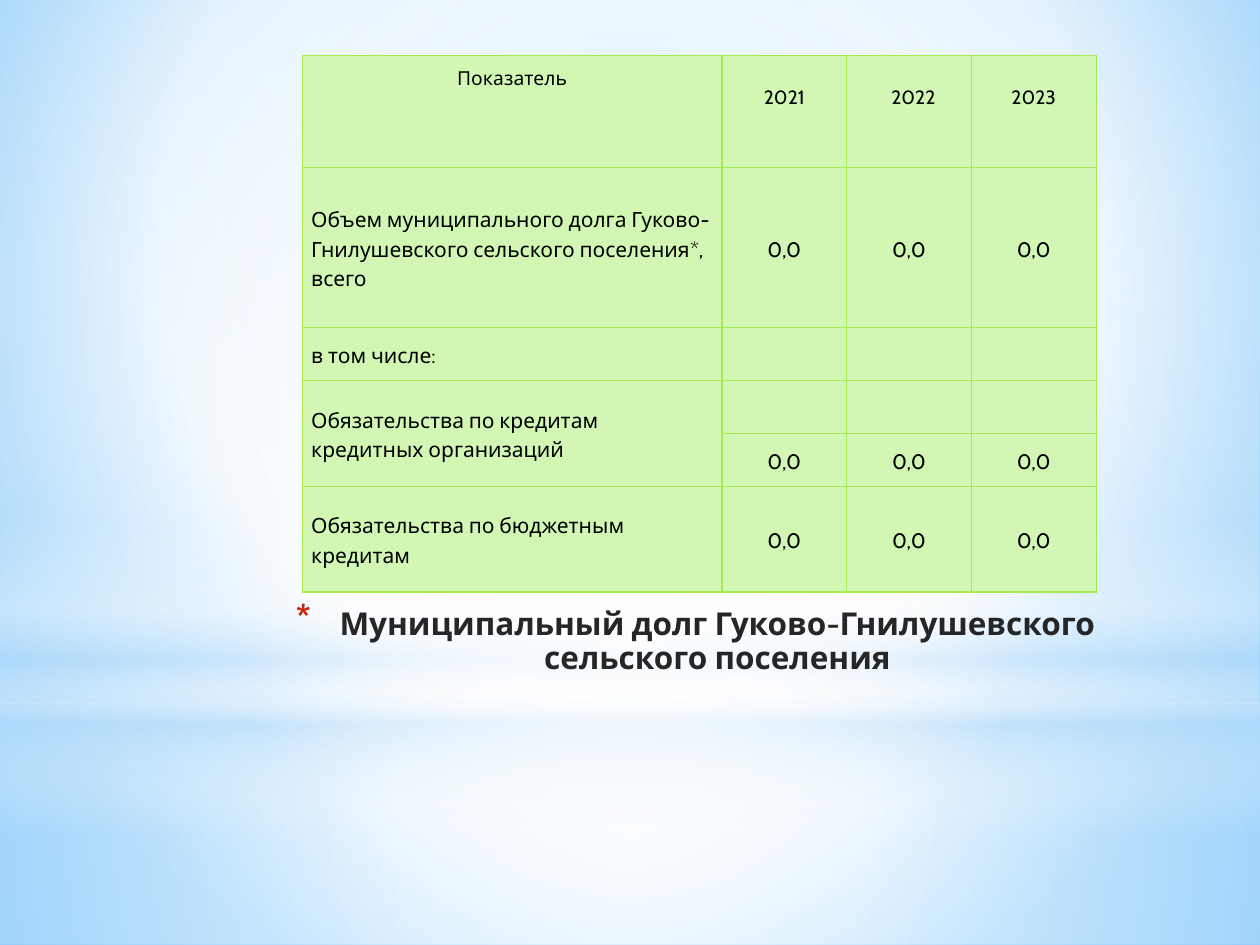
from dataclasses import dataclass
from lxml.etree import SubElement
from pptx import Presentation
from pptx.dml.color import RGBColor
from pptx.enum.shapes import MSO_SHAPE
from pptx.enum.text import MSO_ANCHOR, PP_ALIGN
from pptx.oxml.ns import qn
from pptx.util import Inches, Pt


def color(code):
    return RGBColor.from_string(code)


def add_node(parent, tag, **attributes):
    node = SubElement(parent, qn(tag))
    for name, value in attributes.items():
        node.set(name, str(value))
    return node


def add_solid(parent, code):
    add_node(add_node(parent, "a:solidFill"), "a:srgbClr", val=code)


def write(frame, text, size=12, font="Cabin", code="000000", bold=False,
          align=PP_ALIGN.LEFT, spacing=1.15, margin=0, indent=0):
    """Put one formatted paragraph in a text frame."""
    frame.word_wrap = True
    para = frame.paragraphs[0]
    para.alignment = align
    para.line_spacing = spacing
    para.font.size = Pt(size)
    properties = para._p.get_or_add_pPr()
    properties.set("marL", str(Inches(margin)))
    properties.set("indent", str(Inches(indent)))
    if text:
        span = para.add_run()
        span.text = text
        span.font.size = Pt(size)
        span.font.name = font
        span.font.bold = bold
        span.font.color.rgb = color(code)
    else:
        add_node(para._p, "a:endParaRPr", sz=size * 100)
    return para


@dataclass
class SlideBuilder:
    slide: object
    border: str = "A7EA52"
    cell_fill: str = "D2F7B4"
    title_color: str = "262626"
    bullet_color: str = "C3260C"

    def gradient(self, fill, element, stops, center=None, angle=0):
        """Stops are (position, colour, opacity); center makes it radial."""
        fill.gradient()
        gradient = element.find(".//" + qn("a:gradFill"))
        for child in list(gradient):
            gradient.remove(child)
        stop_list = add_node(gradient, "a:gsLst")
        for position, code, opacity in stops:
            stop = add_node(stop_list, "a:gs", pos=position * 1000)
            tint = add_node(stop, "a:srgbClr", val=code)
            if opacity < 100:
                add_node(tint, "a:alpha", val=opacity * 1000)
        if center:
            radial = add_node(gradient, "a:path", path="circle")
            sides = {side: value * 1000 for side, value in zip("ltrb", center)}
            add_node(radial, "a:fillToRect", **sides)
        else:
            add_node(gradient, "a:lin", ang=angle * 60000, scaled=0)

    def background(self, stops, center):
        self.gradient(self.slide.background.fill, self.slide.element, stops, center)

    def glow(self, kind, left, top, width, height, stops, **direction):
        shape = self.slide.shapes.add_shape(
            kind, Inches(left), Inches(top), Inches(width), Inches(height))
        shape.shadow.inherit = False
        shape.line.fill.background()
        self.gradient(shape.fill, shape.element, stops, **direction)

    def title(self, text, left, top, width, height):
        box = self.slide.shapes.add_textbox(
            Inches(left), Inches(top), Inches(width), Inches(height))
        para = write(box.text_frame, text, size=18, bold=True, spacing=0.9,
                     code=self.title_color, align=PP_ALIGN.CENTER,
                     margin=0.35, indent=-0.35)
        properties = para._p.get_or_add_pPr()
        bullet = add_node(properties, "a:buClr")
        add_node(bullet, "a:srgbClr", val=self.bullet_color)
        add_node(properties, "a:buSzPct", val=128000)
        add_node(properties, "a:buChar", char="*")

    def table(self, left, top, widths, heights):
        table = self.slide.shapes.add_table(
            len(heights), len(widths), Inches(left), Inches(top),
            Inches(sum(widths)), Inches(sum(heights))).table
        table.first_row = table.horz_banding = False
        for column, width in zip(table.columns, widths):
            column.width = Inches(width)
        for row, height in zip(table.rows, heights):
            row.height = Inches(height)
        return table

    def cell(self, cell, text, anchor=MSO_ANCHOR.MIDDLE, top=0, **style):
        cell.margin_left = cell.margin_right = Inches(0.07)
        cell.margin_top, cell.margin_bottom = Inches(top), 0
        cell.vertical_anchor = anchor
        properties = cell._tc.get_or_add_tcPr()
        for side in "LRTB":
            add_solid(add_node(properties, f"a:ln{side}", w=Pt(0.75)), self.border)
        cell.fill.solid()
        cell.fill.fore_color.rgb = color(self.cell_fill)
        write(cell.text_frame, text, **style)


def main():
    deck = Presentation()
    deck.slide_width, deck.slide_height = Inches(10), Inches(7.5)
    page = SlideBuilder(deck.slides.add_slide(deck.slide_layouts[6]))

    # Sky background and soft glows
    white, blue, middle = "FFFFFF", "B4DCFA", (50, 50, 50, 50)
    page.background([(0, "9ED5FF", 100), (60, white, 100), (100, "5BB9FF", 100)],
                    (20, 10, 20, 60))
    page.glow(MSO_SHAPE.RECTANGLE, 0, 5.58, 10, 1.92,
              [(0, white, 91), (37, white, 76), (100, blue, 79)], center=middle)
    page.glow(MSO_SHAPE.RECTANGLE, 0, 0, 10, 5.58,
              [(0, white, 89), (48, white, 62), (100, blue, 79)], center=middle)
    page.glow(MSO_SHAPE.RECTANGLE, 0, 4.12, 10, 2.5,
              [(0, white, 0), (29, white, 30), (45, blue, 40),
               (55, white, 26), (65, blue, 60), (100, white, 0)], angle=90)
    page.glow(MSO_SHAPE.OVAL, 0, 1.75, 10, 5.58,
              [(0, white, 100), (56, white, 0)], center=middle)

    # Title
    page.title("Муниципальный долг Гуково-Гнилушевского сельского поселения",
               1.96, 4.78, 7.12, 1.25)

    # Debt table: header row
    table = page.table(2.4, 0.44, [3.33] + [0.99] * 3,
                       [0.89, 1.27, 0.42, 0.42, 0.42, 0.84])
    header = {"anchor": MSO_ANCHOR.TOP, "size": 11, "align": PP_ALIGN.CENTER}
    page.cell(table.cell(0, 0), "Показатель", spacing=1.5, indent=-0.07, **header)
    for column, year in enumerate(["2021", "2022", "2023"], start=1):
        page.cell(table.cell(0, column), year, top=0.21,
                  indent=0.07 if year == "2022" else 0, **header)

    # Debt table: label and the value shown for each year
    body = [
        ("Объем муниципального долга Гуково-Гнилушевского сельского поселения*, всего",
         "0,0"),
        ("в том числе:", ""),
        ("Обязательства по кредитам кредитных организаций", ""),
        ("", "0,0"),
        ("Обязательства по бюджетным кредитам", "0,0"),
    ]
    for row, (label, value) in enumerate(body, start=1):
        page.cell(table.cell(row, 0), label)
        for column in range(1, 4):
            page.cell(table.cell(row, column), value, align=PP_ALIGN.CENTER)
    table.cell(3, 0).merge(table.cell(4, 0))

    deck.save("out.pptx")


if __name__ == "__main__":
    main()
